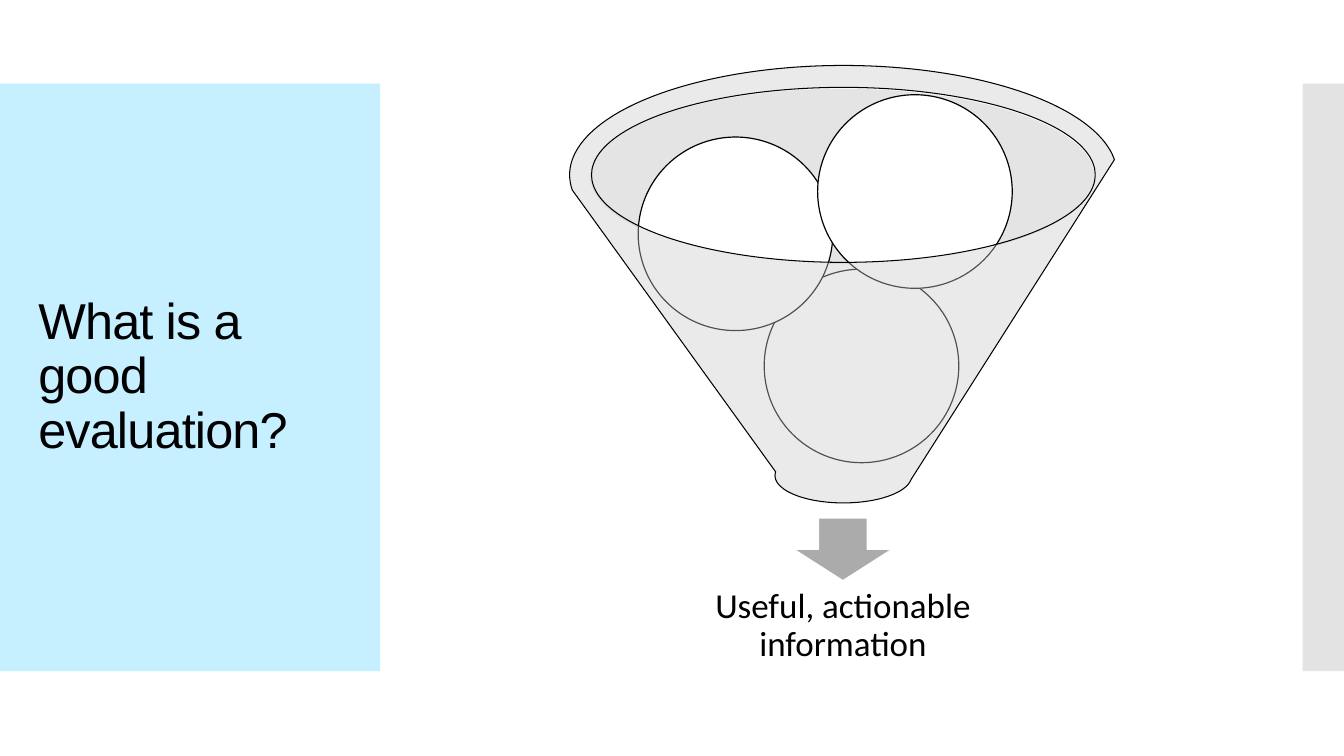
from lxml import etree
from pptx import Presentation
from pptx.dml.color import RGBColor
from pptx.enum import shapes, text
from pptx.oxml import ns
from pptx.util import Inches, Pt

SHAPE = shapes.MSO_SHAPE


def paint(color_format, color, opacity=100):
    color_format.fore_color.rgb = RGBColor.from_string(color)
    if opacity < 100:
        srgb = color_format._xPr.find(".//" + ns.qn("a:srgbClr"))
        etree.SubElement(srgb, ns.qn("a:alpha"), val=str(opacity * 1000))


def add_figure(slide, kind, box, color, opacity=100, outline=None, weight=0.85):
    figure = slide.shapes.add_shape(kind, *map(Inches, box))
    figure.shadow.inherit = False
    figure.fill.solid()
    paint(figure.fill, color, opacity)
    if outline:
        figure.line.fill.solid()
        paint(figure.line.fill, outline)
        figure.line.width = Pt(weight)
    else:
        figure.line.fill.background()
    return figure


def write(frame, wording, font_name, size):
    frame.word_wrap = True
    frame.vertical_anchor = text.MSO_ANCHOR.MIDDLE
    frame.text = wording
    paragraph = frame.paragraphs[0]
    paragraph.line_spacing = 0.9
    paragraph.font.name = font_name
    paragraph.font.size = Pt(size)
    paragraph.font.color.rgb = RGBColor.from_string("000000")
    return paragraph


def add_title_panel(slide, left, top, width, height):
    add_figure(slide, SHAPE.RECTANGLE, (left, top, width, height), "C6EFFF")
    question = slide.shapes.title
    slide.shapes._spTree.append(question._element)
    question.left, question.top = Inches(left + 0.28), Inches(top + 0.4)
    question.width, question.height = Inches(width - 0.55), Inches(height - 0.8)
    paragraph = write(question.text_frame, "What is a good evaluation?", "Arial", 36)
    paragraph.alignment = text.PP_ALIGN.LEFT
    paragraph.font._element.set("spc", "-60")


def add_edge_band(slide, left, top, width, height):
    add_figure(slide, SHAPE.RECTANGLE, (left, top, width, height), "C8C8C8", 50)


def add_funnel(slide, left, top, width, height):
    center = left + width / 2
    add_figure(slide, SHAPE.OVAL, (center - 2.51, top + 0.23, 5, 1.74), "BDBDBD", 40)
    add_figure(slide, SHAPE.DOWN_ARROW, (center - 0.49, top + 4.49, 0.97, 0.62),
               "ABABAB", outline="FFFFFF")

    outcome = slide.shapes.add_textbox(
        Inches(center - 2.33), Inches(top + 4.98), Inches(4.65), Inches(1.16))
    outcome.text_frame.margin_left = outcome.text_frame.margin_right = Inches(0.3)
    paragraph = write(outcome.text_frame, "Useful, actionable information", "Calibri", 25)
    paragraph.alignment = text.PP_ALIGN.CENTER

    for ball_left, ball_top in ((1.93, 2.02), (0.68, 0.71), (2.46, 0.29)):
        add_figure(slide, SHAPE.OVAL, (left + ball_left, top + ball_top, 1.93, 1.92),
                   "FFFFFF", outline="000000")
    add_figure(slide, SHAPE.FUNNEL, (left, top, width, height), "CCCCCC", 40,
               outline="000000", weight=0.75)


def main():
    deck = Presentation()
    deck.slide_width, deck.slide_height = Inches(13.33), Inches(7.5)
    slide = deck.slides.add_slide(deck.slide_layouts.get_by_name("Title Only"))
    add_title_panel(slide, 0, 0.83, 3.77, 5.83)
    add_edge_band(slide, 12.92, 0.83, 0.41, 5.83)
    add_funnel(slide, 5.65, 0.65, 5.43, 4.34)
    deck.save("out.pptx")


if __name__ == "__main__":
    main()
